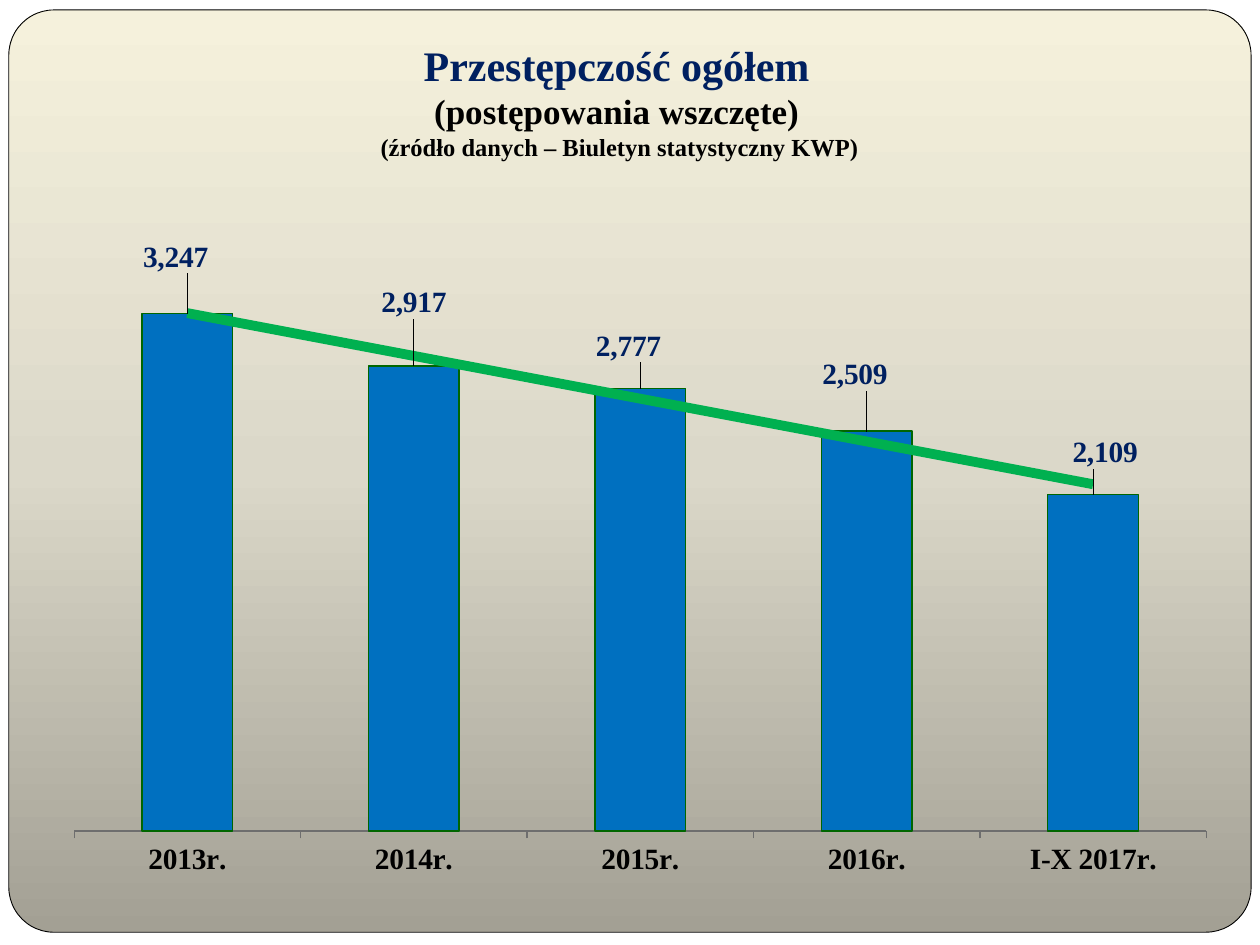
from dataclasses import dataclass

from lxml.etree import SubElement
from pptx import Presentation
from pptx.chart.data import CategoryChartData
from pptx.dml.color import RGBColor
from pptx.enum.chart import XL_CHART_TYPE, XL_LABEL_POSITION, XL_TICK_MARK
from pptx.enum.shapes import MSO_SHAPE
from pptx.enum.text import MSO_ANCHOR, PP_ALIGN
from pptx.oxml import parse_xml
from pptx.oxml.ns import nsdecls, qn
from pptx.util import Inches, Pt


@dataclass(frozen=True)
class Theme:
    font: str = "Times New Roman"
    navy: str = "002060"
    black: str = "000000"
    bar: str = "0070C0"
    bar_line: str = "006600"
    trend: str = "00B050"
    axis: str = "6E6E6E"
    gradient: tuple = ((0, "A3A094"), (50, "DBD8C9"), (100, "F5F1DC"))
    title_size: float = 24
    subtitle_size: float = 20
    source_size: float = 14
    chart_size: float = 16.8
    trend_width: float = 5.6


THEME = Theme()
WIDTH, HEIGHT = Inches(10), Inches(7.5)

TITLE_LINES = (
    ("Przestępczość ogółem", THEME.title_size, THEME.navy),
    ("(postępowania wszczęte)", THEME.subtitle_size, THEME.black),
    (" (źródło danych – Biuletyn statystyczny KWP)", THEME.source_size, THEME.black),
)
# Period, number of cases, label shift as shares of the chart's width and height
CASES = (
    ("2013r.", 3247, (-0.01, -0.05)),
    ("2014r.", 2917, (0, -0.06)),
    ("2015r.", 2777, (-0.01, -0.03)),
    ("2016r.", 2509, (-0.01, -0.05)),
    ("I-X 2017r.", 2109, (0.01, -0.03)),
)


def box(left, top, width, height):
    """Turn shares of the slide's size into lengths."""
    return (int(left * WIDTH), int(top * HEIGHT),
            int(width * WIDTH), int(height * HEIGHT))


def style_font(font, size, color):
    font.name = THEME.font
    font.size = Pt(size)
    font.bold = True
    font.color.rgb = RGBColor.from_string(color)


def manual_layout(**values):
    entries = "".join(f'<c:{tag} val="{value}"/>' for tag, value in values.items())
    return parse_xml(f'<c:layout {nsdecls("c")}><c:manualLayout>{entries}'
                     "</c:manualLayout></c:layout>")


def add_panel(slide):
    panel = slide.shapes.add_shape(MSO_SHAPE.ROUNDED_RECTANGLE,
                                   *box(0.007, 0.0105, 0.986, 0.976))
    panel.adjustments[0] = 0.049
    panel.shadow.inherit = False
    panel.line.color.rgb = RGBColor.from_string(THEME.black)
    panel.line.width = Pt(0.5)
    panel.fill.gradient()
    panel.fill.gradient_angle = 90
    stops = panel.fill._fill._gradFill.find(qn("a:gsLst"))
    for stop in list(stops):
        stops.remove(stop)
    for position, color in THEME.gradient:
        stop = SubElement(stops, qn("a:gs"), pos=str(position * 1000))
        SubElement(stop, qn("a:srgbClr"), val=color)


def add_title(slide):
    frame = slide.shapes.add_textbox(*box(0.098, 0.017, 0.783, 0.167)).text_frame
    frame.word_wrap = True
    frame.vertical_anchor = MSO_ANCHOR.BOTTOM
    frame.margin_bottom = Inches(0.1)
    paragraph = frame.paragraphs[0]
    paragraph.alignment = PP_ALIGN.CENTER
    for index, (text, size, color) in enumerate(TITLE_LINES):
        if index:
            paragraph.add_line_break()
        run = paragraph.add_run()
        run.text = text
        style_font(run.font, size, color)


def style_axes(chart):
    value_axis = chart.value_axis
    value_axis.visible = False
    value_axis.has_major_gridlines = False
    value_axis.minimum_scale, value_axis.maximum_scale = 0, 3550
    category_axis = chart.category_axis
    category_axis.major_tick_mark = XL_TICK_MARK.OUTSIDE
    category_axis.format.line.color.rgb = RGBColor.from_string(THEME.axis)
    style_font(category_axis.tick_labels.font, THEME.chart_size, THEME.black)


def style_labels(series):
    labels = series.data_labels
    labels.show_value = True
    labels.number_format = "#,##0"
    labels.number_format_is_linked = False
    labels.position = XL_LABEL_POSITION.OUTSIDE_END
    style_font(labels.font, THEME.chart_size, THEME.navy)
    for index, (_, _, (x, y)) in enumerate(CASES):
        label = series.points[index].data_label
        style_font(label.font, THEME.chart_size, THEME.navy)
        label.position = XL_LABEL_POSITION.OUTSIDE_END
        label._dLbl.find(qn("c:idx")).addnext(manual_layout(x=x, y=y))


def add_trend_line(series):
    trend_line = parse_xml(
        f'<c:trendline {nsdecls("c", "a")}><c:spPr>'
        f'<a:ln w="{Pt(THEME.trend_width)}"><a:solidFill>'
        f'<a:srgbClr val="{THEME.trend}"/></a:solidFill></a:ln></c:spPr>'
        '<c:trendlineType val="linear"/><c:dispRSqr val="0"/>'
        '<c:dispEq val="0"/></c:trendline>')
    series._element.find(qn("c:cat")).addprevious(trend_line)


def add_cases_chart(slide):
    data = CategoryChartData(number_format="#,##0")
    data.categories = [period for period, _, _ in CASES]
    data.add_series("Series 1", [count for _, count, _ in CASES])
    chart = slide.shapes.add_chart(XL_CHART_TYPE.COLUMN_CLUSTERED,
                                   *box(0.025, 0.255, 0.941, 0.737), data).chart
    chart.has_legend = False
    chart.has_title = False
    style_font(chart.font, THEME.chart_size, THEME.black)
    style_axes(chart)

    plot = chart.plots[0]
    plot.gap_width = 150
    plot.vary_by_categories = False
    series = plot.series[0]
    series.format.fill.solid()
    series.format.fill.fore_color.rgb = RGBColor.from_string(THEME.bar)
    series.format.line.color.rgb = RGBColor.from_string(THEME.bar_line)
    series.format.line.width = Pt(0.75)
    style_labels(series)
    add_trend_line(series)

    plot_area = chart._chartSpace.chart.plotArea
    for layout in plot_area.findall(qn("c:layout")):
        plot_area.remove(layout)
    plot_area.insert(0, manual_layout(layoutTarget="inner", xMode="edge", yMode="edge",
                                      x=0.036, y=0.032, w=0.955, h=0.815))


def main():
    presentation = Presentation()
    presentation.slide_width, presentation.slide_height = WIDTH, HEIGHT
    slide = presentation.slides.add_slide(presentation.slide_layouts[6])
    add_panel(slide)
    add_title(slide)
    add_cases_chart(slide)
    presentation.save("out.pptx")


if __name__ == "__main__":
    main()
